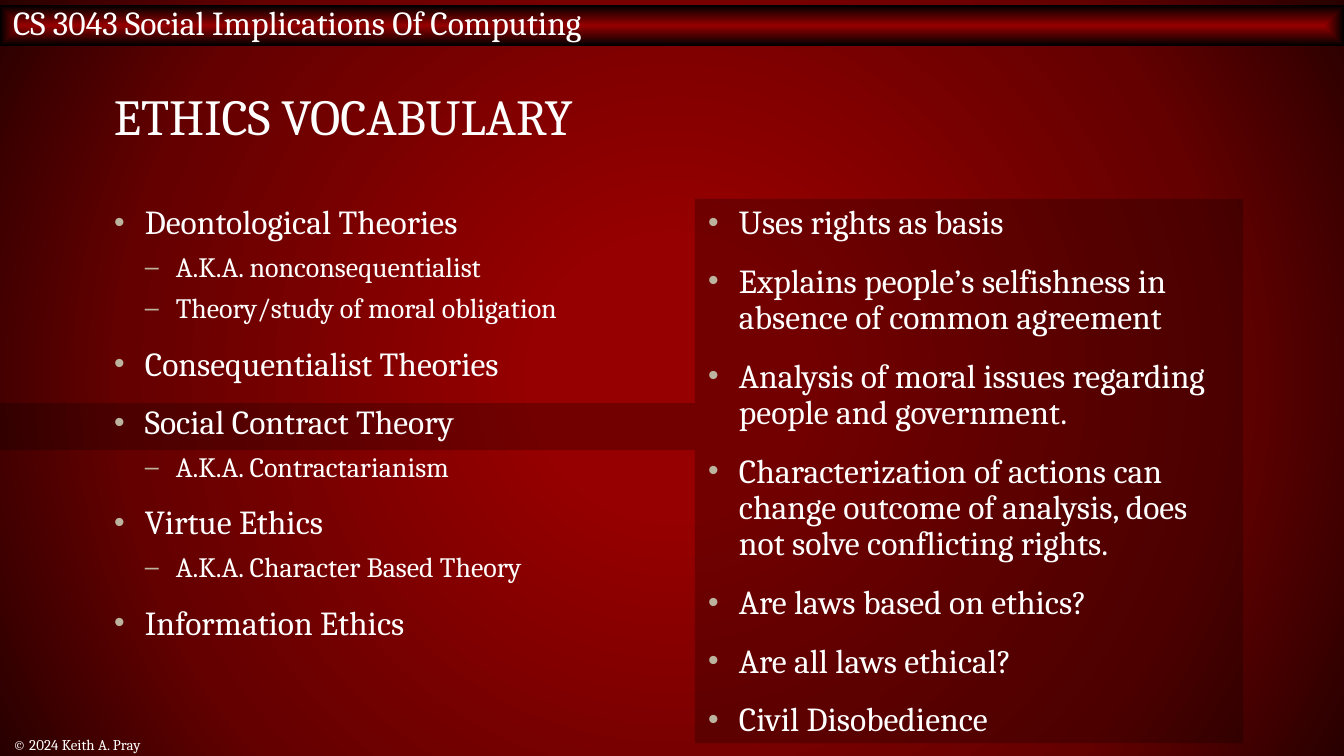
from lxml import etree
from pptx import Presentation
from pptx import util as u
from pptx.dml import color
from pptx.enum import shapes, text
from pptx.oxml import ns

FONT, WHITE, BLACK, RED, TAN = "Cambria", "FFFFFF", "000000", "960000", "BCB49E"
LEFT, RIGHT, TOP, WIDE, TALL = 0.75, 5.17, 1.48, 4.08, 4.05
INDENT = 0.23
LEVELS = [("•", 18, 12), ("–", 15, 6)]

THEORIES = [
    (0, "Deontological Theories"),
    (1, "A.K.A. nonconsequentialist"),
    (1, "Theory/study of moral obligation"),
    (0, "Consequentialist Theories"),
    (0, "Social Contract Theory"),
    (1, "A.K.A. Contractarianism"),
    (0, "Virtue Ethics"),
    (1, "A.K.A. Character Based Theory"),
    (0, "Information Ethics"),
]
NOTIONS = [
    (0, "Uses rights as basis"),
    (0, "Explains people’s selfishness in absence of common agreement"),
    (0, "Analysis of moral issues regarding people and government."),
    (0, "Characterization of actions can change outcome of analysis, does not solve conflicting rights."),
    (0, "Are laws based on ethics?"),
    (0, "Are all laws ethical?"),
    (0, "Civil Disobedience"),
]


def rgb(code):
    return color.RGBColor.from_string(code)


def sub(parent, tag, **attrs):
    node = etree.SubElement(parent, ns.qn(tag))
    for key, value in attrs.items():
        node.set(key, str(value))
    return node


def solid(owner):
    return next(owner.iter(ns.qn("a:solidFill")))


def blend(owner, stops, kind):
    old = solid(owner)
    grad = etree.Element(ns.qn("a:gradFill"), rotWithShape="1")
    steps = sub(grad, "a:gsLst")
    for place, code in stops:
        sub(sub(steps, "a:gs", pos=place * 1000), "a:srgbClr", val=code)
    focus = sub(grad, "a:path", path=kind)
    sub(focus, "a:fillToRect", l=50000, t=50000, r=50000, b=50000)
    old.getparent().replace(old, grad)


def write(para, words, size=18, space=None, before=0):
    run = para.add_run()
    run.text = words
    run.font.name, run.font.size = FONT, u.Pt(size)
    run.font.color.rgb = rgb(WHITE)
    para.alignment = text.PP_ALIGN.LEFT
    para.space_before = u.Pt(before)
    if space:
        para.line_spacing = space


class Deck:
    """Holds the presentation, its current slide and its style."""

    def __init__(self, wide, high):
        self.show = Presentation()
        self.show.slide_width, self.show.slide_height = u.Inches(wide), u.Inches(high)
        self.slide = self.show.slides.add_slide(self.show.slide_layouts[6])

    def ground(self, stops):
        fill = self.slide.background.fill
        fill.solid()
        fill.fore_color.rgb = rgb(BLACK)
        blend(self.slide.element, stops, "circle")

    def panel(self, *box, alpha=None):
        shape = self.slide.shapes.add_shape(shapes.MSO_SHAPE.RECTANGLE, *map(u.Inches, box))
        shape.shadow.inherit = False
        shape.line.fill.background()
        shape.fill.solid()
        shape.fill.fore_color.rgb = rgb(BLACK)
        if alpha:
            sub(solid(shape.element)[0], "a:alpha", val=alpha * 1000)
        return shape

    def banner(self, words, *box):
        shape = self.panel(*box)
        blend(shape.element, [(0, RED), (100, BLACK)], "shape")
        frame = shape.text_frame
        frame.margin_top, frame.margin_bottom = 0, u.Inches(0.05)
        frame.vertical_anchor = text.MSO_ANCHOR.MIDDLE
        write(frame.paragraphs[0], words)

    def frame(self, *box):
        frame = self.slide.shapes.add_textbox(*map(u.Inches, box)).text_frame
        frame.word_wrap = True
        return frame

    def label(self, words, *box, **style):
        frame = self.frame(*box)
        frame.vertical_anchor = text.MSO_ANCHOR.MIDDLE
        write(frame.paragraphs[0], words, **style)

    def points(self, items, *box):
        frame = self.frame(*box)
        for place, (level, words) in enumerate(items):
            para = frame.add_paragraph() if place else frame.paragraphs[0]
            mark, size, before = LEVELS[level]
            para.level = level
            props = para._p.get_or_add_pPr()
            props.set("marL", str(u.Inches(INDENT * (level + 1))))
            props.set("indent", str(-u.Inches(INDENT)))
            sub(sub(props, "a:buClr"), "a:srgbClr", val=TAN)
            sub(props, "a:buSzPct", val=90000)
            sub(props, "a:buFont", typeface="Arial")
            sub(props, "a:buChar", char=mark)
            write(para, words, size=size, space=0.9, before=before if place else 0)


def main():
    deck = Deck(10, 10 * 9 / 16)
    deck.ground([(17, RED), (71, "650000"), (100, "290000")])
    deck.banner("CS 3043 Social Implications Of Computing", 0, 0.04, 10, 0.3)
    deck.panel(0, 3, RIGHT, 0.35, alpha=24)
    deck.panel(RIGHT, TOP, WIDE, TALL, alpha=24)
    deck.label("ETHICS VOCABULARY", LEFT, 0.4, 8.5, 1, size=27, space=0.8)
    deck.points(NOTIONS, RIGHT, TOP, WIDE, TALL)
    deck.label("© 2024 Keith A. Pray", 0, 5.46, 6.08, 0.16, size=8)
    deck.points(THEORIES, LEFT, TOP, WIDE, 3.67)
    deck.show.save("out.pptx")


if __name__ == "__main__":
    main()
